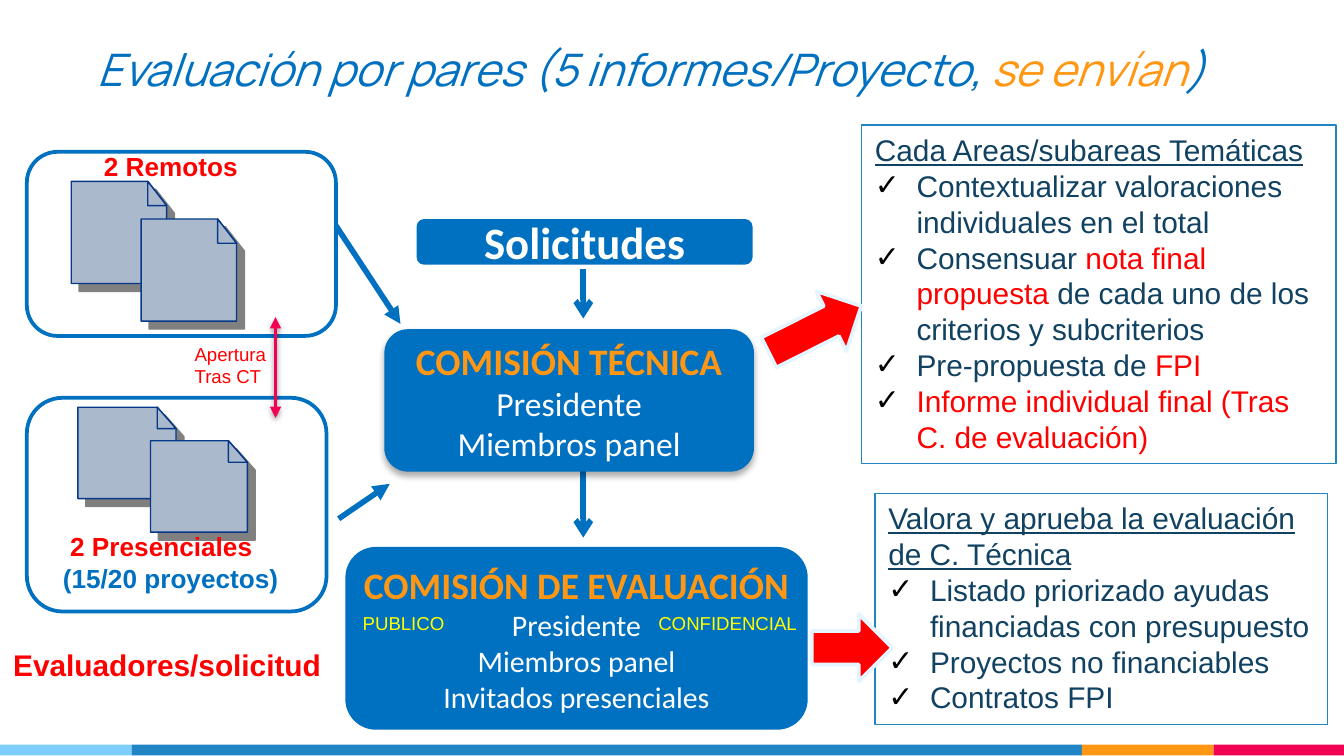
from lxml.etree import SubElement
from pptx import Presentation
from pptx.dml.color import RGBColor
from pptx.enum.shapes import MSO_CONNECTOR, MSO_SHAPE
from pptx.enum.text import MSO_ANCHOR, MSO_AUTO_SIZE, PP_ALIGN
from pptx.oxml.ns import qn
from pptx.util import Inches, Pt

PX = 9144  # 100 px to the inch

BLUE = RGBColor(0x00, 0x70, 0xC0)
MID_BLUE = RGBColor(0x21, 0x85, 0xC5)
SKY = RGBColor(0x7E, 0xCE, 0xFD)
PALE = RGBColor(0xE5, 0xF5, 0xFF)
NAVY = RGBColor(0x11, 0x42, 0x62)
ORANGE = RGBColor(0xFF, 0x97, 0x15)
PINK = RGBColor(0xF2, 0x02, 0x53)
RED = RGBColor(0xFF, 0x00, 0x00)
YELLOW = RGBColor(0xFF, 0xFF, 0x00)
WHITE = RGBColor(0xFF, 0xFF, 0xFF)
PAGE_FILL = RGBColor(0xAB, 0xB9, 0xCC)
PAGE_LINE = RGBColor(0x06, 0x38, 0x88)

# A paragraph is a list of (text, format) runs.
TITLE = [("Evaluación por pares (5 informes/Proyecto, ", {}),
         ("se envían", {"color": ORANGE}), (")", {})]
FOOTER_BANDS = [(98, SKY), (707, MID_BLUE), (98, ORANGE), (97, PINK)]

HEADING = {"size": 20, "bold": True, "color": ORANGE}
STAGES = [  # box, text size, paragraphs, shadow
    ((310, 163, 250, 34), 24, [[("Solicitudes", {"bold": True})]], None),
    ((257, 407, 344, 136), 16,
     [[("COMISIÓN DE EVALUACIÓN", HEADING)], [("Presidente", {})],
      [("Miembros panel", {})], [("Invitados presenciales", {})]], None),
    ((286, 245, 275, 106), 18,
     [[("COMISIÓN TÉCNICA", HEADING)], [("Presidente", {})],
      [("Miembros panel", {})]], ("000000", 32, 3.5, 2.2, 90)),
]

REVIEWER_FRAMES = [(20, 113, 230, 137), (20, 296, 223, 159)]
PAGES = [(53, 135, 71, 76), (105, 163, 71, 76), (58, 303, 73, 68), (112, 328, 72, 68)]
PAGE_SHADOW = ("808080", 100, 0, 6, 45)

CRITERIA_LISTS = [  # box, heading, items
    ((641, 93, 353, 252), "Cada Areas/subareas Temáticas", [
        [("Contextualizar valoraciones individuales en el total", {})],
        [("Consensuar ", {}), ("nota final propuesta ", {"color": RED}),
         ("de cada uno de los criterios y subcriterios", {})],
        [("Pre-propuesta de ", {}), ("FPI", {"color": RED})],
        [("Informe individual final (Tras C. de evaluación)", {"color": RED})]]),
    ((651, 367, 337, 172), "Valora y aprueba la evaluación de C. Técnica", [
        [("Listado priorizado ayudas financiadas con presupuesto", {})],
        [("Proyectos no financiables", {})],
        [("Contratos FPI", {})]]),
]

LABELS = [  # box, wrap, format, paragraphs
    ((62, 107, 143, 34), True, {"size": 14, "bold": True, "color": RED},
     [[(" 2 Remotos", {})]]),
    ((37, 390, 184, 57), True, {"size": 14, "bold": True, "color": RED},
     [[(" 2 Presenciales ", {}), ("(15/20 proyectos)", {"color": BLUE})]]),
    ((0, 476, 252, 37), False, {"size": 16, "bold": True, "color": RED},
     [[("Evaluadores/solicitud", {})]]),
    ((480, 450, 128, 27), False, {"size": 10, "color": YELLOW}, [[("CONFIDENCIAL", {})]]),
    ((260, 450, 82, 27), False, {"size": 10, "color": YELLOW}, [[("PUBLICO", {})]]),
    ((135, 250, 74, 44), True, {"size": 10, "color": RED},
     [[("Apertura", {})], [("Tras CT", {})]]),
]

ARROWS = [  # from, to, color, width, head, tail, shadow
    ((434, 294), (434, 400), BLUE, 3, None, "arrow", None),
    ((434, 200), (434, 237), BLUE, 3, None, "arrow", None),
    ((250, 168), (298, 241), BLUE, 3, None, "triangle", None),
    ((252, 386), (290, 360), BLUE, 3, None, "triangle", None),
    ((205, 236), (205, 311), PINK, 2, "triangle", "triangle", ("000000", 38, 3.1, 1.6, 90)),
]
BLOCK_ARROWS = [((568, 220, 77, 50), 333.3), ((604, 457, 60, 50), 0)]


def emu(lengths):
    return [length * PX for length in lengths]


def write(frame, paragraphs, base, align=PP_ALIGN.LEFT):
    for index, runs in enumerate(paragraphs):
        paragraph = frame.paragraphs[0] if index == 0 else frame.add_paragraph()
        paragraph.alignment = align
        paragraph.space_before = Pt(0)
        for text, changes in runs:
            run = paragraph.add_run()
            run.text = text
            values = {"name": "Arial", **base, **changes}
            run.font.color.rgb = values.pop("color")
            run.font.size = Pt(values.pop("size"))
            for name, value in values.items():
                setattr(run.font, name, value)


def add_shadow(effects, color, opacity, blur, distance, angle):
    shadow = SubElement(effects, qn("a:outerShdw"), blurRad=str(Pt(blur)),
                        dist=str(Pt(distance)), dir=str(angle * 60000),
                        algn="ctr", rotWithShape="0")
    tint = SubElement(shadow, qn("a:srgbClr"), val=color)
    SubElement(tint, qn("a:alpha"), val=str(opacity * 1000))


def paint(shape, fill=None, line=None, width=1, shadow=None):
    if fill is None:
        shape.fill.background()
    else:
        shape.fill.solid()
        shape.fill.fore_color.rgb = fill
    if line is None:
        shape.line.fill.background()
    else:
        shape.line.color.rgb = line
        shape.line.width = Pt(width)
    shape.shadow.inherit = False
    if shadow:
        add_shadow(shape._element.spPr.find(qn("a:effectLst")), *shadow)


def add_box(kind, box, **look):
    shape = shapes.add_shape(kind, *emu(box))
    paint(shape, **look)
    return shape


def place(shape, box):
    shape.left, shape.top, shape.width, shape.height = emu(box)


def add_outline(points, **look):
    builder = shapes.build_freeform(*points[0], scale=PX)
    builder.add_line_segments(points[1:], close=True)
    paint(builder.convert_to_shape(), fill=PAGE_FILL, line=PAGE_LINE, width=0.75, **look)


def add_page(left, top, width, height):
    """Draw a sheet with its top right corner folded."""
    right, bottom = left + width, top + height
    crease, fold = right - 14, top + round(height * 0.24)
    add_outline([(left, top), (crease, top), (right, fold), (right, bottom), (left, bottom)],
                shadow=PAGE_SHADOW)
    add_outline([(crease, top), (crease, fold), (right, fold)])


def add_check(paragraph):
    properties = paragraph._p.get_or_add_pPr()
    properties.set("marL", str(31 * PX))
    properties.set("indent", str(-31 * PX))
    SubElement(SubElement(properties, qn("a:buClr")), qn("a:srgbClr"), val="000000")
    SubElement(properties, qn("a:buFont"), typeface="Arial")
    SubElement(properties, qn("a:buChar"), char="✓")


def add_arrow(start, end, color, width, head, tail, shadow):
    connector = shapes.add_connector(MSO_CONNECTOR.STRAIGHT, *emu(start + end))
    connector.line.color.rgb = color
    connector.line.width = Pt(width)
    line = connector.line._get_or_add_ln()
    for tag, kind in (("a:headEnd", head), ("a:tailEnd", tail)):
        if kind:
            SubElement(line, qn(tag), type=kind)
    effects = SubElement(connector._element.spPr, qn("a:effectLst"))
    if shadow:
        add_shadow(effects, *shadow)


presentation = Presentation()
presentation.slide_width, presentation.slide_height = Inches(10), Inches(5.625)
slide = presentation.slides.add_slide(presentation.slide_layouts[3])
shapes = slide.shapes
title, *bodies = slide.placeholders

place(title, (0, -13, 970, 94))
frame = title.text_frame
frame.auto_size, frame.vertical_anchor = MSO_AUTO_SIZE.NONE, MSO_ANCHOR.BOTTOM
frame.margin_top = frame.margin_bottom = 10 * PX
write(frame, [TITLE], {"name": "Manrope", "size": 24, "italic": True, "color": BLUE},
      PP_ALIGN.CENTER)

for body, (box, heading, items) in zip(bodies, CRITERIA_LISTS):
    place(body, box)
    body.line.color.rgb = MID_BLUE
    body.line.width = Pt(0.75)
    frame = body.text_frame
    frame.auto_size, frame.vertical_anchor = MSO_AUTO_SIZE.NONE, MSO_ANCHOR.TOP
    write(frame, [[(heading, {"underline": True})], *items], {"size": 16, "color": NAVY})
    first, *rest = frame.paragraphs
    properties = first._p.get_or_add_pPr()
    properties.set("marL", "0")
    properties.set("indent", "0")
    SubElement(properties, qn("a:buNone"))
    for paragraph in rest:
        add_check(paragraph)

left = 0
for width, color in FOOTER_BANDS:
    add_box(MSO_SHAPE.RECTANGLE, (left, 554, width, 8), fill=color)
    left += width

for page in PAGES:
    add_page(*page)
for box in REVIEWER_FRAMES:
    add_box(MSO_SHAPE.ROUNDED_RECTANGLE, box, line=BLUE, width=2)
for arrow in ARROWS:
    add_arrow(*arrow)

for box, size, paragraphs, shadow in STAGES:
    stage = add_box(MSO_SHAPE.ROUNDED_RECTANGLE, box, fill=BLUE, shadow=shadow)
    stage.text_frame.word_wrap = False
    stage.text_frame.vertical_anchor = MSO_ANCHOR.MIDDLE
    write(stage.text_frame, paragraphs, {"name": "Calibri", "size": size, "color": WHITE},
          PP_ALIGN.CENTER)

for box, rotation in BLOCK_ARROWS:
    add_box(MSO_SHAPE.RIGHT_ARROW, box, fill=RED, line=PALE, width=2).rotation = rotation

for box, wrap, style, paragraphs in LABELS:
    label = shapes.add_textbox(*emu(box))
    label.text_frame.word_wrap = wrap
    write(label.text_frame, paragraphs, style)

presentation.save("out.pptx")
